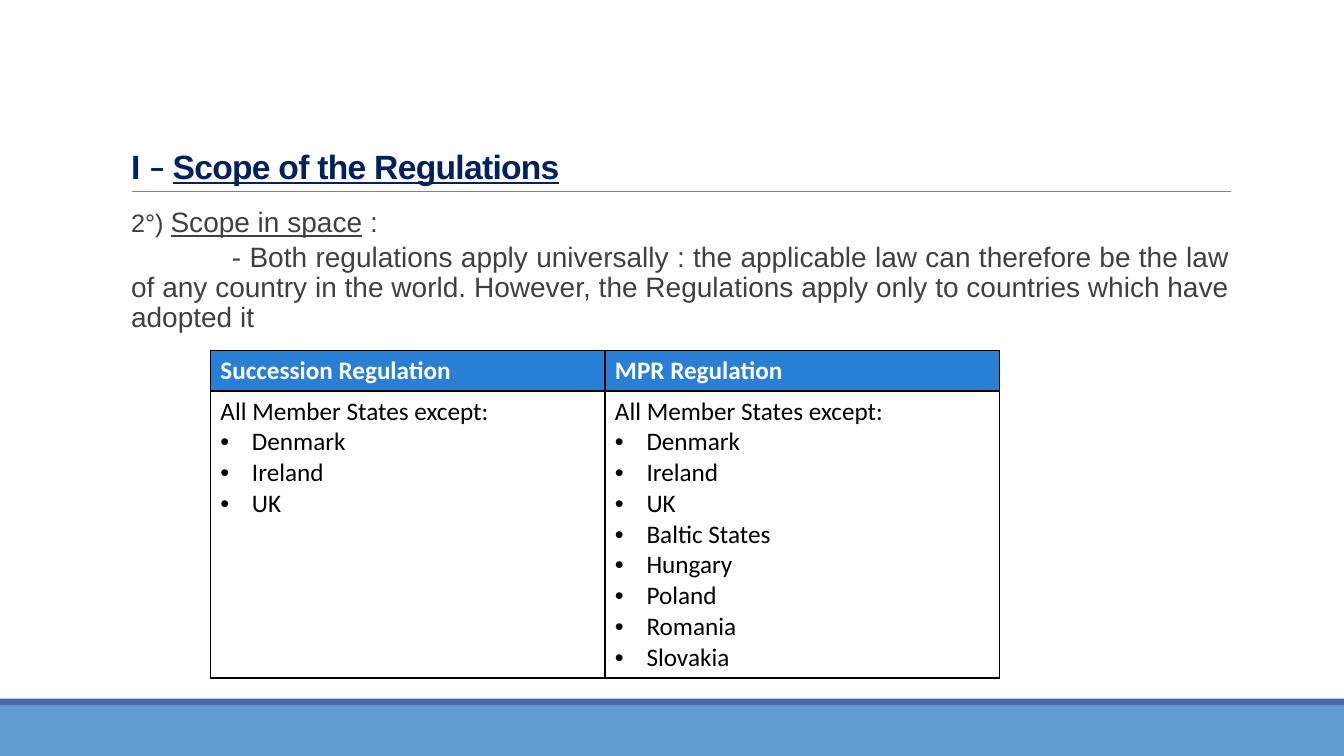
from dataclasses import dataclass

from lxml.etree import SubElement
from pptx import Presentation
from pptx.dml.color import RGBColor
from pptx.enum.shapes import MSO_CONNECTOR, MSO_SHAPE
from pptx.enum.text import MSO_ANCHOR, MSO_AUTO_SIZE, PP_ALIGN
from pptx.oxml.ns import qn
from pptx.util import Pt


@dataclass(frozen=True)
class Theme:
    band: str = "629DD1"
    stripe: str = "4A66AC"
    rule: str = "808080"
    title: str = "002060"
    body: str = "404040"
    header: str = "297FD5"
    paper: str = "FFFFFF"
    ink: str = "000000"
    heading_font: str = "Arial"
    table_font: str = "Calibri"
    title_size: float = 24
    body_size: float = 20
    small_size: float = 18


class SlideBuilder:
    def __init__(self, slide, theme):
        self.slide = slide
        self.theme = theme

    def style(self, font, name, size, color, bold=False):
        font.name = name
        font.size = Pt(size)
        font.bold = bold
        font.color.rgb = RGBColor.from_string(color)

    def indent(self, paragraph, left, first, bullet=None):
        properties = paragraph._p.get_or_add_pPr()
        properties.set("marL", str(Pt(left)))
        properties.set("indent", str(Pt(first)))
        if bullet:
            SubElement(properties, qn("a:buFont"), typeface="Arial")
            SubElement(properties, qn("a:buChar"), char=bullet)
        else:
            SubElement(properties, qn("a:buNone"))

    def place(self, placeholder, left, top, width, height, anchor):
        placeholder.left, placeholder.top = Pt(left), Pt(top)
        placeholder.width, placeholder.height = Pt(width), Pt(height)
        frame = placeholder.text_frame
        frame.word_wrap = True
        frame.auto_size = MSO_AUTO_SIZE.NONE
        frame.vertical_anchor = anchor
        return frame

    def bar(self, top, height, color):
        bar = self.slide.shapes.add_shape(
            MSO_SHAPE.RECTANGLE, 0, Pt(top), Pt(960), Pt(height))
        bar.shadow.inherit = False
        bar.fill.solid()
        bar.fill.fore_color.rgb = RGBColor.from_string(color)
        bar.line.fill.background()

    def rule(self, left, right, y):
        rule = self.slide.shapes.add_connector(
            MSO_CONNECTOR.STRAIGHT, Pt(left), Pt(y), Pt(right), Pt(y))
        rule.line.color.rgb = RGBColor.from_string(self.theme.rule)
        rule.line.width = Pt(0.5)
        SubElement(rule._element.spPr, qn("a:effectLst"))

    def title(self, number, dash, heading):
        theme = self.theme
        frame = self.place(self.slide.shapes.title, 86.4, 22.3, 792, 114.5, MSO_ANCHOR.BOTTOM)
        paragraph = frame.paragraphs[0]
        paragraph.alignment = PP_ALIGN.LEFT
        paragraph.line_spacing = 0.85
        self.style(paragraph.font, theme.heading_font, theme.title_size, theme.title, True)
        for text in (number, dash, heading):
            run = paragraph.add_run()
            run.text = text
            run._r.get_or_add_rPr().set("spc", "-50")
            if text == dash:
                run.font.name = theme.table_font
            if text == heading:
                run.font.underline = True

    def body(self, paragraphs):
        """Each paragraph is a first-line indent and its (text, size, underline) runs."""
        theme = self.theme
        frame = self.place(self.slide.placeholders[1], 86.4, 145.4, 792, 105.1, MSO_ANCHOR.TOP)
        frame.margin_left = frame.margin_right = 0
        frame.margin_top = frame.margin_bottom = Pt(3.6)
        for index, (first, runs) in enumerate(paragraphs):
            paragraph = frame.add_paragraph() if index else frame.paragraphs[0]
            self.indent(paragraph, 7.2, first)
            paragraph.alignment = PP_ALIGN.JUSTIFY
            paragraph.line_spacing = 0.9
            paragraph.space_before = Pt(0)
            paragraph.space_after = Pt(3)
            self.style(paragraph.font, theme.heading_font, theme.body_size, theme.body)
            for text, size, underline in runs:
                run = paragraph.add_run()
                run.text = text
                if size != theme.body_size:
                    run.font.size = Pt(size)
                if underline:
                    run.font.underline = True

    def cell(self, cell, lines, fill, color, bold):
        theme = self.theme
        properties = cell._tc.get_or_add_tcPr()
        for side in ("lnL", "lnR", "lnT", "lnB"):
            border = SubElement(properties, qn(f"a:{side}"), w=str(Pt(1)))
            SubElement(SubElement(border, qn("a:solidFill")), qn("a:srgbClr"), val=theme.ink)
        cell.fill.solid()
        cell.fill.fore_color.rgb = RGBColor.from_string(fill)
        for index, line in enumerate(lines):
            paragraph = cell.text_frame.add_paragraph() if index else cell.text_frame.paragraphs[0]
            if index:
                self.indent(paragraph, 22.5, -22.5, "•")
            self.style(paragraph.font, theme.table_font, theme.small_size, color, bold)
            paragraph.add_run().text = line

    def table(self, columns):
        """Each column is a heading and the lines below it, bulleted after the first."""
        theme = self.theme
        table = self.slide.shapes.add_table(
            2, len(columns), Pt(150.3), Pt(250.1), Pt(563.6), Pt(231.1)).table
        table.rows[0].height, table.rows[1].height = Pt(29.2), Pt(201.9)
        for index, (heading, lines) in enumerate(columns):
            self.cell(table.cell(0, index), [heading], theme.header, theme.paper, True)
            self.cell(table.cell(1, index), lines, theme.paper, theme.ink, False)


def main():
    presentation = Presentation()
    presentation.slide_width, presentation.slide_height = Pt(960), Pt(540)
    theme = Theme()
    builder = SlideBuilder(
        presentation.slides.add_slide(presentation.slide_layouts[1]), theme)

    # Footer bands and title rule
    builder.bar(504, 36, theme.band)
    builder.bar(499, 5, theme.stripe)
    builder.rule(94.3, 879, 136.8)

    # Title and explanation
    builder.title("I ", "– ", "Scope of the Regulations")
    builder.body([
        (0, [("2°) ", theme.small_size, False),
             ("Scope in space", theme.body_size, True),
             (" : ", theme.body_size, False)]),
        (72, [("- Both regulations apply universally : the applicable law can therefore "
               "be the law of any country in the world. However, the Regulations apply "
               "only to countries which have adopted it", theme.body_size, False)]),
    ])

    # Member States outside each regulation
    succession = ["All Member States except:", "Denmark", "Ireland", "UK"]
    property_regimes = succession + ["Baltic States", "Hungary", "Poland", "Romania", "Slovakia"]
    builder.table([
        ("Succession Regulation", succession),
        ("MPR Regulation", property_regimes),
    ])

    presentation.save("out.pptx")


if __name__ == "__main__":
    main()
